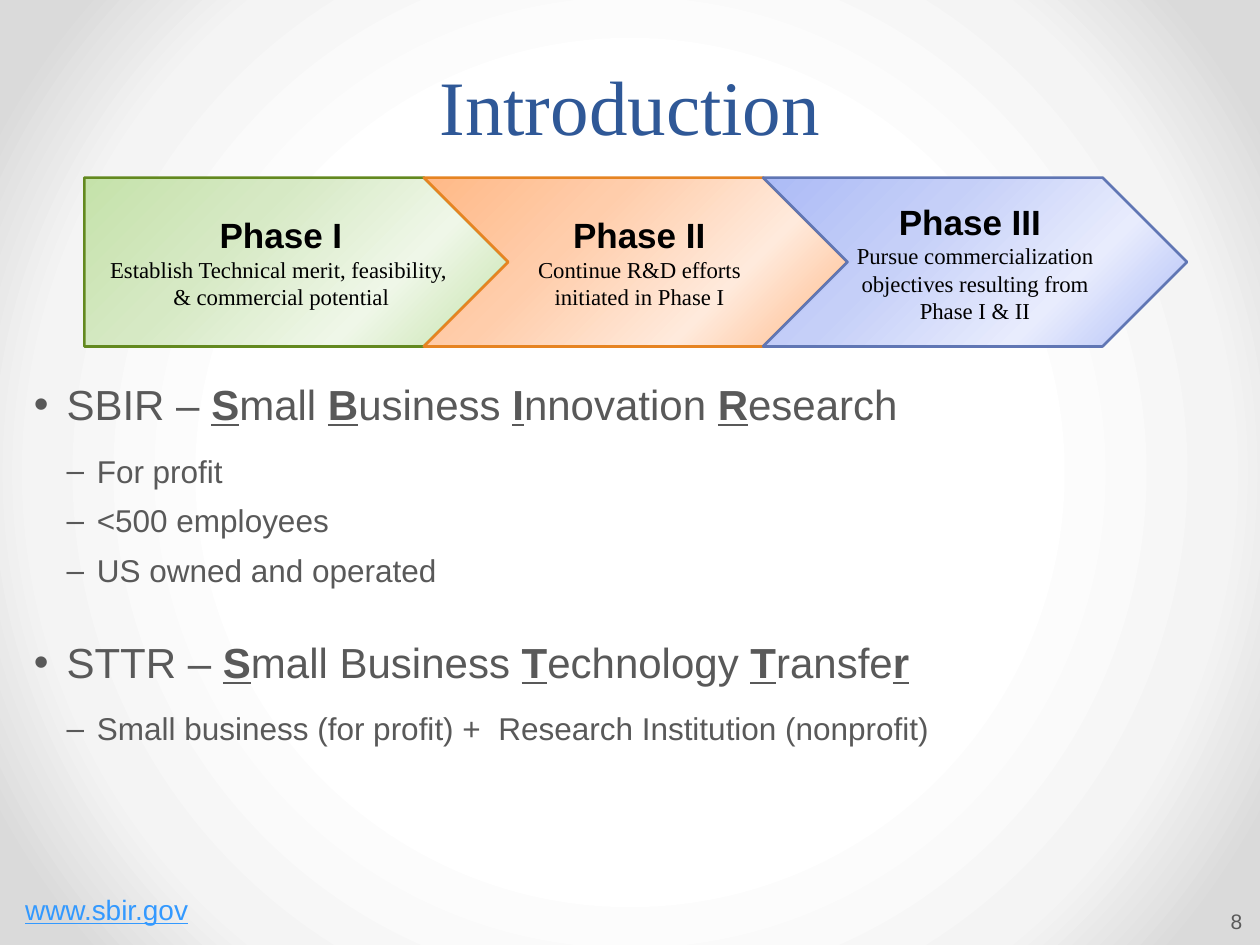
from dataclasses import dataclass

from lxml.etree import SubElement
from pptx import Presentation
from pptx.dml.color import RGBColor
from pptx.enum.shapes import MSO_SHAPE
from pptx.enum.text import MSO_ANCHOR, PP_ALIGN
from pptx.oxml import parse_xml
from pptx.oxml.ns import nsdecls, qn
from pptx.util import Inches, Pt


@dataclass(frozen=True)
class Theme:
    sans: str = "Arial"
    serif: str = "Times New Roman"
    title: str = "2F5897"
    body: str = "595959"
    dark: str = "000000"
    link: str = "3399FF"
    title_size: int = 44
    heading_size: int = 24
    phase_size: int = 20
    item_size: int = 18
    link_size: int = 16
    detail_size: int = 13
    number_size: int = 12


T = Theme()
BACKDROP = [(50, "FFFFFF"), (76, "F4F4F4"), (92, "DADADA")]
RADIAL = ('<a:path path="circle"><a:fillToRect l="50000" t="50000" '
          'r="50000" b="50000"/></a:path>')
DIAGONAL = '<a:lin ang="2700000" scaled="0"/>'

PHASES = [
    ("Phase I", ["Establish Technical merit, feasibility, ", "& commercial potential"],
     "63891F", ["C5E2AA", "D6E9C4", "EFF7E8", "C5E2AA"],
     MSO_SHAPE.PENTAGON, 0, 3.03, (0.12, 0.03)),
    ("Phase II", ["Continue R&D efforts initiated in Phase I"],
     "E68422", ["FFB987", "FFCDAB", "FFEADC", "FFB987"],
     MSO_SHAPE.CHEVRON, 0.67, 2.02, (0.09, 0.03)),
    ("Phase III ", ["Pursue commercialization objectives resulting from Phase I & II"],
     "6076B4", ["ACBBF6", "C5CFF8", "E8ECFD", "ACBBF6"],
     MSO_SHAPE.CHEVRON, 0.67, 2.02, (0, 0)),
]

PROGRAMS = [
    ("SBIR – *S*mall *B*usiness *I*nnovation *R*esearch", 9,
     ["For profit", "<500 employees", "US owned and operated"]),
    ("STTR – *S*mall Business *T*echnology *T*ransfe*r*", 30,
     ["Small business (for profit) +  Research Institution (nonprofit)"]),
]


def set_gradient(element, stops, direction):
    solid = element.find(".//" + qn("a:solidFill"))
    gs = "".join(f'<a:gs pos="{pos * 1000}"><a:srgbClr val="{color}"/></a:gs>'
                 for pos, color in stops)
    grad = parse_xml(f'<a:gradFill {nsdecls("a")} rotWithShape="1">'
                     f'<a:gsLst>{gs}</a:gsLst>{direction}</a:gradFill>')
    solid.getparent().replace(solid, grad)


def add_run(p, text, size, color, font=T.sans, bold=False, underline=False):
    r = p.add_run()
    r.text = text
    r.font.name, r.font.size = font, Pt(size)
    r.font.bold, r.font.underline = bold, underline
    r.font.color.rgb = RGBColor.from_string(color)


def add_text(s, box, anchor=MSO_ANCHOR.TOP, insets=(0.1, 0.05, 0.1, 0.05), wrap=True):
    tf = s.shapes.add_textbox(*map(Inches, box)).text_frame
    tf.word_wrap, tf.vertical_anchor = wrap, anchor
    tf.margin_left, tf.margin_top, tf.margin_right, tf.margin_bottom = map(Inches, insets)
    return tf


def add_title(s, box):
    p = add_text(s, box, MSO_ANCHOR.BOTTOM).paragraphs[0]
    p.alignment, p.line_spacing = PP_ALIGN.CENTER, Pt(58)
    add_run(p, "Introduction", T.title_size, T.title, T.serif)


def add_phase(s, box, phase):
    name, lines, edge, colors, kind, offset, text_width, (left, right) = phase
    x, y, w, h = box
    sp = s.shapes.add_shape(kind, *map(Inches, box))
    sp.shadow.inherit = False
    sp.fill.solid()
    set_gradient(sp._element.spPr, zip((0, 35, 70, 100), colors), DIAGONAL)
    sp.line.color.rgb, sp.line.width = RGBColor.from_string(edge), Pt(1.5)

    tf = add_text(s, (x + offset, y, text_width, h), MSO_ANCHOR.MIDDLE,
                  (left, 0.06, right, 0.06))
    p = tf.paragraphs[0]
    p.alignment = PP_ALIGN.CENTER
    add_run(p, name, T.phase_size, T.dark, bold=True)
    p = tf.add_paragraph()
    p.alignment = PP_ALIGN.CENTER
    for i, line in enumerate(lines):
        if i:
            p.add_line_break()
        add_run(p, line, T.detail_size, T.dark, T.serif)


def add_phases(s, box):
    x, y, w, h = box
    tip = h / 2
    step = (w - tip) / len(PHASES)
    for i, phase in enumerate(PHASES):
        add_phase(s, (x + i * step, y, step + tip, h), phase)


def set_bullet(p, char, margin, hanging, before, after=0):
    p.line_spacing, p.space_before, p.space_after = 0.9, Pt(before), Pt(after)
    pPr = p._p.get_or_add_pPr()
    pPr.set("marL", str(Inches(margin)))
    pPr.set("indent", str(-Inches(hanging)))
    SubElement(pPr, qn("a:buFont")).set("typeface", T.sans)
    SubElement(pPr, qn("a:buChar")).set("char", char)


def add_programs(s, box):
    tf = add_text(s, box)
    p = tf.paragraphs[0]
    for heading, before, items in PROGRAMS:
        p = p if not p.runs else tf.add_paragraph()
        set_bullet(p, "•", 0.26, 0.26, before, 6)
        for i, part in enumerate(heading.split("*")):
            if part:
                marked = i % 2 == 1
                add_run(p, part, T.heading_size, T.body, bold=marked, underline=marked)
        for item in items:
            p = tf.add_paragraph()
            p.level = 1
            set_bullet(p, "–", 0.5, 0.24, 9)
            add_run(p, item, T.item_size, T.body)


def add_footer(s, box):
    x, y, w, h = box
    tf = add_text(s, (x, y, 1.61, h), MSO_ANCHOR.BOTTOM, (0.2, 0.05, 0.1, 0.15), False)
    add_run(tf.paragraphs[0], "www.sbir.gov", T.link_size, T.link, underline=True)

    tf = add_text(s, (x + w - 0.7, y + 0.03, 0.61, 0.4), MSO_ANCHOR.BOTTOM,
                  (0.03, 0.05, 0.05, 0.05))
    p = tf.paragraphs[0]
    p.alignment = PP_ALIGN.RIGHT
    add_run(p, "8", T.number_size, T.body)


def main():
    prs = Presentation()
    prs.slide_width, prs.slide_height = Inches(10), Inches(7.5)
    s = prs.slides.add_slide(prs.slide_layouts[6])
    s.background.fill.solid()
    set_gradient(s.element, BACKDROP, RADIAL)
    add_programs(s, (0.17, 3, 9.25, 4.17))
    add_footer(s, (0, 7.03, 10, 0.47))
    add_phases(s, (0.67, 1.41, 8.75, 1.34))
    add_title(s, (0.5, 0, 9, 1.25))
    prs.save("out.pptx")


if __name__ == "__main__":
    main()
